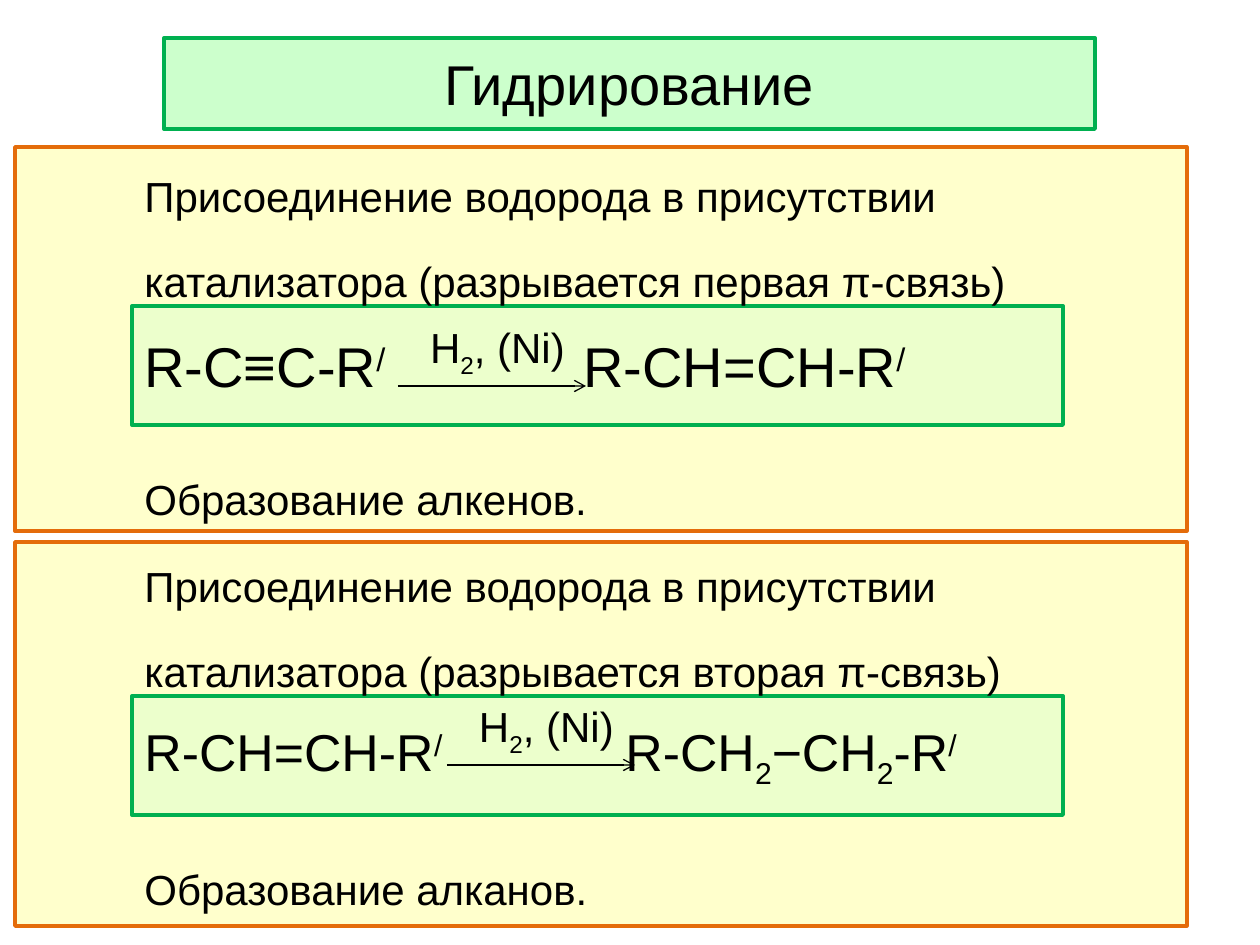
"""Build the slide on hydrogenation of alkynes and alkenes."""
from lxml.etree import SubElement
from pptx import Presentation
from pptx.dml.color import RGBColor
from pptx.enum.shapes import MSO_CONNECTOR as CONNECTOR, MSO_SHAPE as SHAPE
from pptx.enum.text import MSO_ANCHOR as ANCHOR, PP_ALIGN as ALIGN
from pptx.oxml.ns import qn
from pptx.util import Pt

PX = 914400 // 126
BLACK = RGBColor(0x00, 0x00, 0x00)
CREAM = RGBColor(0xFF, 0xFF, 0xCC)
MINT = RGBColor(0xCC, 0xFF, 0xCC)
GREEN = RGBColor(0x00, 0xB0, 0x50)
ORANGE = RGBColor(0xE4, 0x6C, 0x0A)

SUB, SUPER = -25000, 30000
TITLE = "Гидрирование"
CONDITIONS = [("H", 0), ("2", SUB), (", (Ni)", 0)]
STAGES = [
    {
        "process": "Присоединение водорода в присутствии катализатора (разрывается первая π-связь)",
        "equation": [("R-C≡C-R", 0), ("/", SUPER), ("\tR-CH=CH-R", 0), ("/", SUPER)],
        "result": "Образование алкенов.",
        "size": 32, "product_tab": 439, "arrow": (398, 386),
    },
    {
        "process": "Присоединение водорода в присутствии катализатора (разрывается вторая π-связь)",
        "equation": [("R-CH=CH-R", 0), ("/", SUPER), ("\tR-CH", 0), ("2", SUB),
                     ("−CH", 0), ("2", SUB), ("-R", 0), ("/", SUPER)],
        "result": "Образование алканов.",
        "size": 29.6, "product_tab": 481, "arrow": (447, 765),
    },
]
PANEL_TOP, PANEL_STEP = 147, 395
CONTENT_TOP, CONTENT_STEP = 147, 390
CONTENT_LEFT, CONTENT_WIDTH = 132, 931
ARROW_LENGTH = 188


def scaled(*lengths):
    return [length * PX for length in lengths]


def add_box(shapes, place, fill, outline, weight, alpha=None):
    box = shapes.add_shape(SHAPE.RECTANGLE, *scaled(*place))
    box.shadow.inherit = False
    box.fill.solid()
    box.fill.fore_color.rgb = fill
    box.line.color.rgb = outline
    box.line.width = Pt(weight)
    if alpha:
        color = box.fill._xPr.find(qn("a:solidFill"))[0]
        SubElement(color, qn("a:alpha"), val=str(alpha * 1000))
    return box


def write(holder, parts, size, align=ALIGN.LEFT, spacing=None):
    frame = holder.text_frame
    frame.word_wrap = True
    frame.vertical_anchor = ANCHOR.MIDDLE
    paragraph = frame.paragraphs[0]
    paragraph.alignment = align
    if spacing:
        paragraph.line_spacing = spacing
    for text, baseline in parts:
        run = paragraph.add_run()
        run.text = text
        run.font.size = Pt(size)
        run.font.name = "Arial"
        run.font.color.rgb = BLACK
        if baseline:
            run.font._element.set("baseline", str(baseline))
    return paragraph


def add_text(shapes, place, parts, size, **style):
    write(shapes.add_textbox(*scaled(*place)), parts, size, **style)


def add_arrow(shapes, left, top):
    arrow = shapes.add_connector(
        CONNECTOR.STRAIGHT, *scaled(left, top, left + ARROW_LENGTH, top))
    arrow.line.color.rgb = BLACK
    arrow.line.width = Pt(0.75)
    SubElement(arrow.line._get_or_add_ln(), qn("a:tailEnd"), type="arrow")
    SubElement(arrow._element.spPr, qn("a:effectLst"))


def add_reaction(shapes, stage, top):
    reaction = shapes.add_group_shape().shapes
    box = add_box(reaction, (CONTENT_LEFT, top, CONTENT_WIDTH, 119), MINT, GREEN, 2.25, 36)
    equation = write(box, stage["equation"], stage["size"])
    tabs = SubElement(equation._p.get_or_add_pPr(), qn("a:tabLst"))
    SubElement(tabs, qn("a:tab"), pos=str(stage["product_tab"] * PX), algn="l")
    left, arrow_top = stage["arrow"]
    add_arrow(reaction, left, arrow_top)
    add_text(reaction, (left - 9, arrow_top - 60, 217, 49), CONDITIONS, 24, align=ALIGN.CENTER)


def main():
    deck = Presentation()
    deck.slide_width, deck.slide_height = scaled(1260, 945)
    shapes = deck.slides.add_slide(deck.slide_layouts[6]).shapes

    for row in range(len(STAGES)):
        add_box(shapes, (15, PANEL_TOP + row * PANEL_STEP, 1172, 384), CREAM, ORANGE, 2)
    heading = add_box(shapes, (164, 38, CONTENT_WIDTH, 91), MINT, GREEN, 2.25)
    write(heading, [(TITLE, 0)], 32, align=ALIGN.CENTER)

    for row, stage in enumerate(STAGES):
        top = CONTENT_TOP + row * CONTENT_STEP
        add_reaction(shapes, stage, top + 159)
        for key, offset, height in (("process", 0, 147), ("result", 290, 88)):
            add_text(shapes, (CONTENT_LEFT, top + offset, CONTENT_WIDTH, height),
                     [(stage[key], 0)], 24, spacing=1.7)

    deck.save("out.pptx")


if __name__ == "__main__":
    main()
